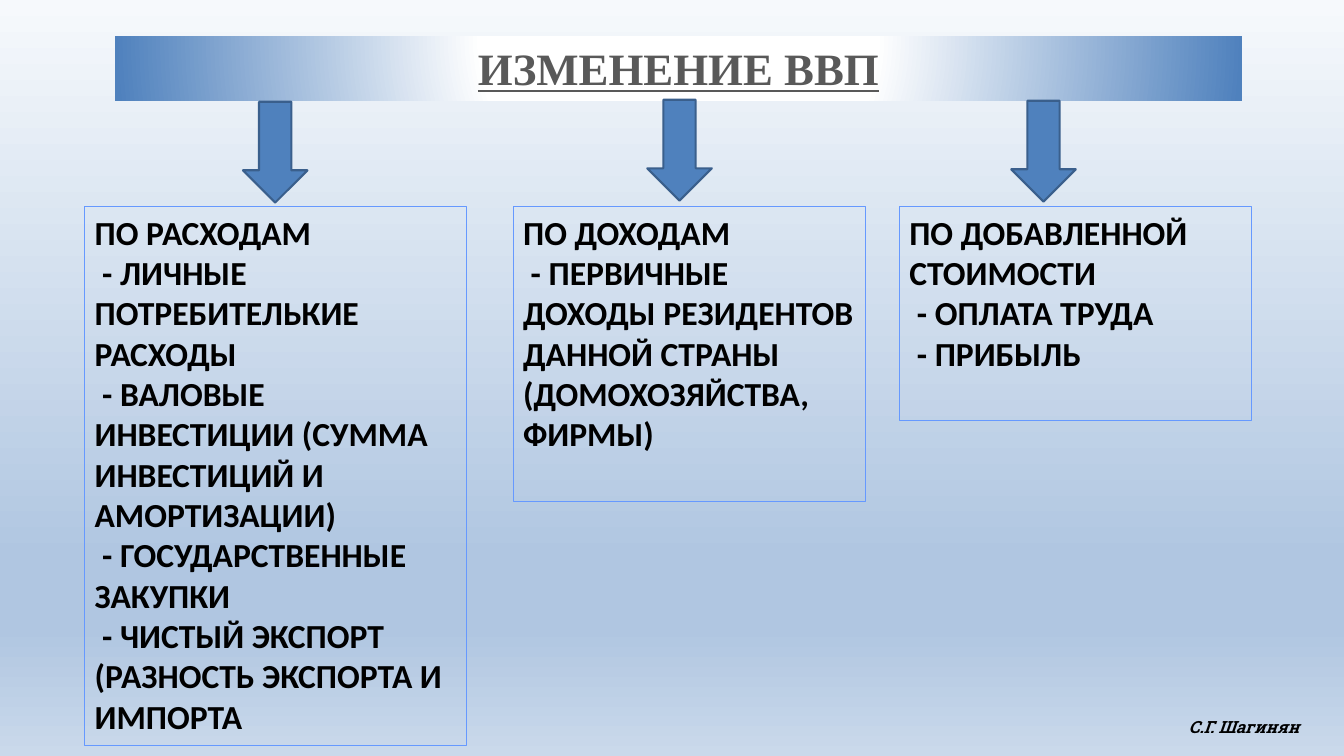
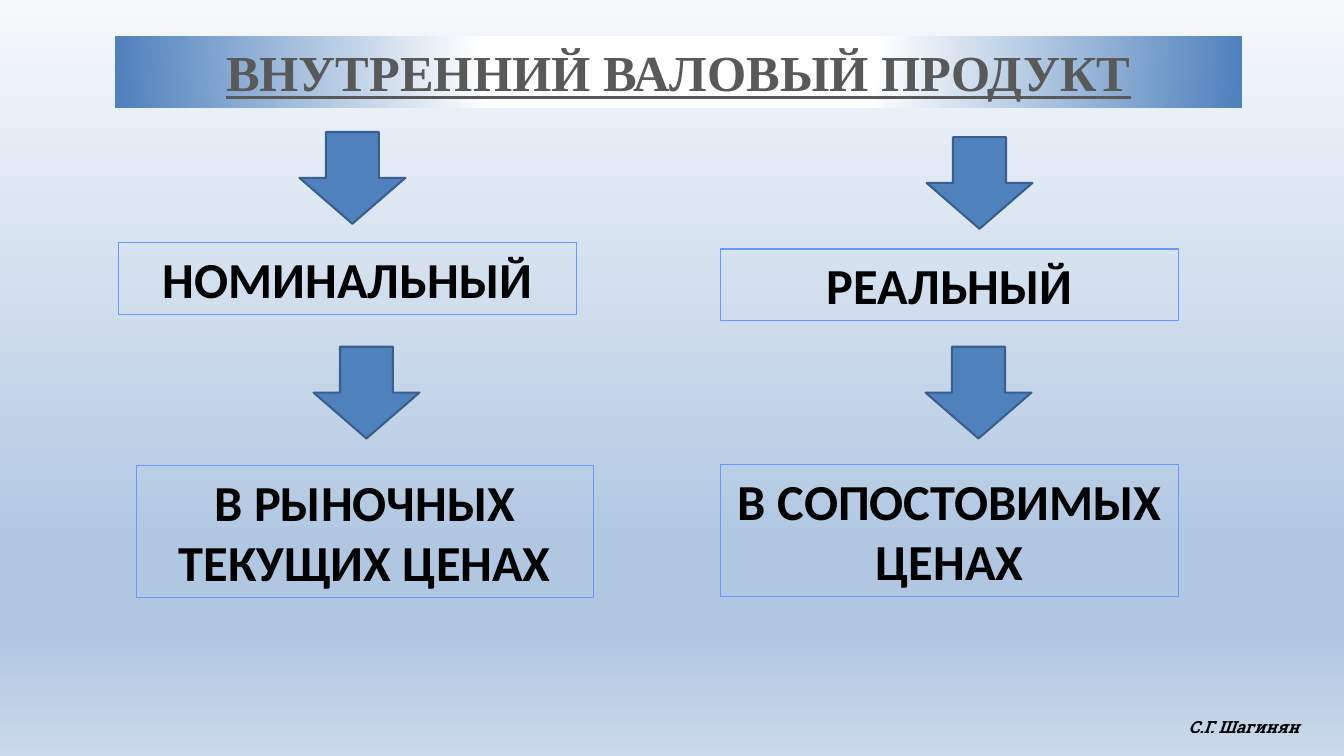
from lxml import etree
from pptx import Presentation
from pptx.dml.color import RGBColor
from pptx.enum.shapes import MSO_SHAPE
from pptx.enum.text import MSO_ANCHOR, MSO_AUTO_SIZE, PP_ALIGN
from pptx.oxml.ns import qn
from pptx.util import Inches, Pt

RECT, DOWN = MSO_SHAPE.RECTANGLE, MSO_SHAPE.DOWN_ARROW
LEFT, MID = PP_ALIGN.LEFT, PP_ALIGN.CENTER
TOP, GROW = MSO_ANCHOR.TOP, MSO_AUTO_SIZE.SHAPE_TO_FIT_TEXT

THEME = {
    "back": [(0, "F6F9FC"), (74, "B0C6E1"), (83, "B0C6E1"), (100, "CAD9EB")],
    "band": [(0, "FFFFFF"), (35, "FFFFFF"), (100, "4F81BD")],
    "arrow": RGBColor.from_string("4F81BD"),
    "edge": RGBColor.from_string("3A5F8C"),
    "frame": RGBColor.from_string("6699FF"),
    "title": ("595959", {"name": "Times New Roman", "bold": True, "underline": True}),
    "body": ("000000", {"name": "Calibri", "bold": True}),
    "foot": ("000000", {"name": "Roboto Slab", "bold": True, "italic": True}),
    "small": 12, "text": 24, "head": 32, "large": 36,
}

SLIDES = [
    {
        "title": "ИЗМЕНЕНИЕ ВВП", "size": "head", "band": 0.64,
        "arrow": (0.64, 1), "spots": [(2.41, 1.01), (6.42, 0.99), (10.03, 1)],
        "text": "text", "align": LEFT,
        "boxes": [
            ((0.84, 2.05, 3.79, 5.35), [
                "ПО РАСХОДАМ",
                " - ЛИЧНЫЕ ПОТРЕБИТЕЛЬКИЕ РАСХОДЫ",
                " - ВАЛОВЫЕ ИНВЕСТИЦИИ (СУММА ИНВЕСТИЦИЙ И АМОРТИЗАЦИИ)",
                " - ГОСУДАРСТВЕННЫЕ ЗАКУПКИ",
                " - ЧИСТЫЙ ЭКСПОРТ (РАЗНОСТЬ ЭКСПОРТА И ИМПОРТА"]),
            ((5.09, 2.05, 3.49, 2.93), [
                "ПО ДОХОДАМ",
                " - ПЕРВИЧНЫЕ ДОХОДЫ РЕЗИДЕНТОВ ДАННОЙ СТРАНЫ (ДОМОХОЗЯЙСТВА, ФИРМЫ)"]),
            ((8.92, 2.05, 3.49, 2.12), [
                "ПО ДОБАВЛЕННОЙ СТОИМОСТИ", " - ОПЛАТА ТРУДА", " - ПРИБЫЛЬ"]),
        ],
    },
    {
        "title": "ВНУТРЕННИЙ ВАЛОВЫЙ ПРОДУКТ", "size": "large", "band": 0.71,
        "arrow": (1.05, 0.91),
        "spots": [(2.97, 1.31), (9.19, 1.36), (3.11, 3.44), (9.18, 3.44)],
        "text": "large", "align": MID,
        "boxes": [
            ((1.18, 2.41, 4.54, 0.71), ["НОМИНАЛЬНЫЙ"]),
            ((7.15, 2.47, 4.54, 0.71), ["РЕАЛЬНЫЙ"]),
            ((1.35, 4.62, 4.54, 1.31), ["В РЫНОЧНЫХ ТЕКУЩИХ ЦЕНАХ"]),
            ((7.15, 4.61, 4.54, 1.31), ["В СОПОСТОВИМЫХ ЦЕНАХ"]),
        ],
    },
]


def blend(owner, fill, stops, round_to=None):
    """Fill with a gradient: downward, or radial around the round_to rectangle."""
    fill.gradient()
    grad = next(owner.element.iter(qn("a:gradFill")))
    for child in list(grad):
        grad.remove(child)
    row = etree.SubElement(grad, qn("a:gsLst"))
    for spot, shade in stops:
        stop = etree.SubElement(row, qn("a:gs"), pos=str(spot * 1000))
        etree.SubElement(stop, qn("a:srgbClr"), val=shade)
    if round_to:
        ring = etree.SubElement(grad, qn("a:path"), path="circle")
        sides = {side: str(part * 1000) for side, part in zip("ltrb", round_to)}
        etree.SubElement(ring, qn("a:fillToRect"), sides)
    else:
        etree.SubElement(grad, qn("a:lin"), ang="5400000", scaled="0")


def write(shape, lines, style, size, align, wrap=True):
    frame = shape.text_frame
    frame.word_wrap = wrap
    frame.vertical_anchor = TOP
    shade, form = THEME[style]
    for num, line in enumerate(lines):
        para = frame.paragraphs[0] if num == 0 else frame.add_paragraph()
        para.alignment = align
        run = para.add_run()
        run.text = line
        run.font.size = Pt(THEME[size])
        run.font.color.rgb = RGBColor.from_string(shade)
        for key, value in form.items():
            setattr(run.font, key, value)


deck = Presentation()
deck.slide_width, deck.slide_height = Inches(13.33), Inches(7.5)
blank = deck.slide_layouts[6]
master = deck.slide_master
blend(master, master.background.fill, THEME["back"])

for data in SLIDES:
    shapes = deck.slides.add_slide(blank).shapes

    band = shapes.add_shape(
        RECT, Inches(1.14), Inches(0.36), Inches(11.18), Inches(data["band"]))
    band.shadow.inherit = False
    band.line.fill.background()
    blend(band, band.fill, THEME["band"], (50, -80, 50, 180))
    write(band, [data["title"]], "title", data["size"], MID)

    for spot in data["spots"]:
        arrow = shapes.add_shape(DOWN, *map(Inches, spot + data["arrow"]))
        arrow.shadow.inherit = False
        arrow.fill.solid()
        arrow.fill.fore_color.rgb = THEME["arrow"]
        arrow.line.color.rgb = THEME["edge"]
        arrow.line.width = Pt(1.5)

    for place, lines in data["boxes"]:
        box = shapes.add_shape(RECT, *map(Inches, place))
        box.shadow.inherit = False
        box.fill.background()
        box.line.color.rgb = THEME["frame"]
        box.line.width = Pt(0.75)
        write(box, lines, "body", data["text"], data["align"])

    foot = shapes.add_textbox(Inches(11.69), Inches(7.06), Inches(1.44), Inches(0.3))
    write(foot, ["С.Г. Шагинян"], "foot", "small", LEFT, wrap=False)
    foot.text_frame.auto_size = GROW

deck.save("out.pptx")
